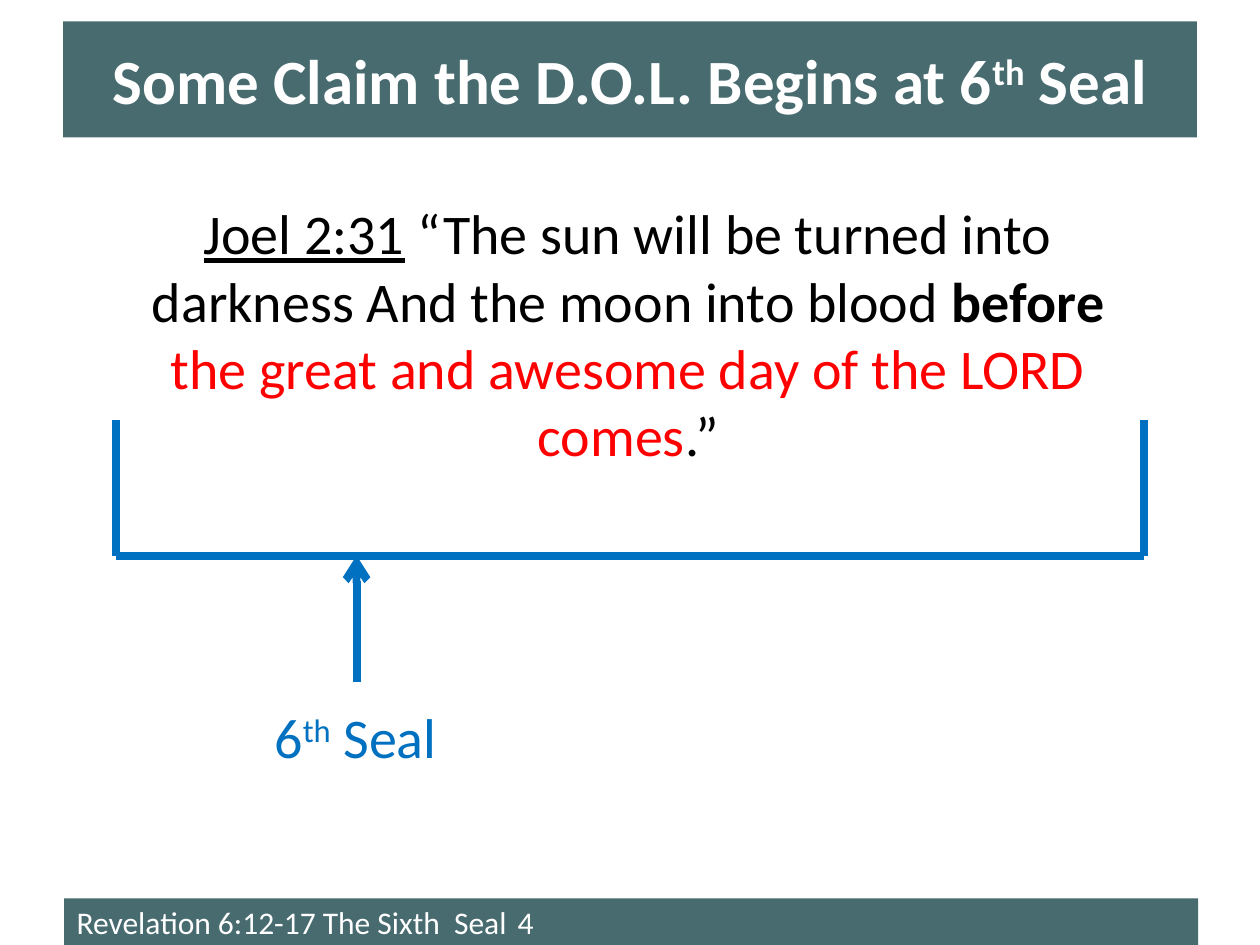
from dataclasses import dataclass
from typing import Sequence

from lxml.etree import SubElement
from pptx import Presentation
from pptx.dml.color import RGBColor as Rgb
from pptx.enum.shapes import MSO_CONNECTOR as Conn, MSO_SHAPE as Form
from pptx.enum.text import MSO_ANCHOR as Anchor, MSO_AUTO_SIZE as Fit, PP_ALIGN as Align
from pptx.oxml.ns import qn
from pptx.util import Inches, Pt

HUES = {"teal": "486B70", "blue": "0070C0", "red": "FF0000", "black": "000000", "white": "FFFFFF"}
LEFT, RIGHT, BASE, TOP = 0.92, 9.08, 4.41, 3.33
MARK = 2.83


@dataclass
class Box:
    left: float
    top: float
    width: float
    height: float

    def lengths(self) -> list:
        return [Inches(n) for n in (self.left, self.top, self.width, self.height)]


@dataclass
class Span:
    text: str
    hue: str
    bold: bool = False
    under: bool = False
    raised: bool = False


@dataclass
class Line:
    start: tuple[float, float]
    end: tuple[float, float]
    arrow: bool = False


def hue(name: str) -> Rgb:
    return Rgb.from_string(HUES[name])


def write(frame, spans: Sequence[Span], size: float, align: Align = Align.LEFT) -> None:
    frame.word_wrap = True
    frame.text = spans[0].text
    para = frame.paragraphs[0]
    para.alignment = align
    for span in spans[1:]:
        para.add_run().text = span.text
    for run, span in zip(para.runs, spans):
        font = run.font
        font.name, font.size = "Calibri", Pt(size)
        font.bold, font.underline = span.bold, span.under
        font.color.rgb = hue(span.hue)
        if span.raised:
            run._r.get_or_add_rPr().set("baseline", "30000")


def paint(shape) -> None:
    shape.fill.solid()
    shape.fill.fore_color.rgb = hue("teal")
    shape.line.fill.background()
    shape.text_frame.vertical_anchor = Anchor.MIDDLE


def add_bar(slide, box: Box, spans: Sequence[Span], size: float) -> None:
    bar = slide.shapes.add_shape(Form.RECTANGLE, *box.lengths())
    bar.shadow.inherit = False
    paint(bar)
    write(bar.text_frame, spans, size)


def set_title(slide, box: Box, spans: Sequence[Span], size: float) -> None:
    title = slide.shapes.title
    title.left, title.top, title.width, title.height = box.lengths()
    paint(title)
    title.text_frame.auto_size = Fit.NONE
    write(title.text_frame, spans, size, Align.CENTER)


def add_text(slide, box: Box, spans: Sequence[Span], size: float, align: Align = Align.LEFT) -> None:
    frame = slide.shapes.add_textbox(*box.lengths()).text_frame
    write(frame, spans, size, align)
    frame.auto_size = Fit.SHAPE_TO_FIT_TEXT


def add_line(slide, line: Line) -> None:
    ends = [Inches(n) for n in line.start + line.end]
    link = slide.shapes.add_connector(Conn.STRAIGHT, *ends)
    link.line.color.rgb = hue("blue")
    link.line.width = Pt(4.5)
    if line.arrow:
        SubElement(link.line._get_or_add_ln(), qn("a:tailEnd"), type="arrow")
    SubElement(link._element.spPr, qn("a:effectLst"))


def seal(lead: str, tone: str, bold: bool = False) -> list[Span]:
    return [
        Span(lead, tone, bold),
        Span("th", tone, bold, raised=True),
        Span(" Seal", tone, bold),
    ]


VERSE = [
    Span("Joel 2:31", "black", under=True),
    Span(" “The sun will be turned into darkness And the moon into blood ", "black"),
    Span("before ", "black", bold=True),
    Span("the great and awesome day of the LORD comes", "red"),
    Span(".”", "black"),
]
LINES = [
    Line((LEFT, BASE), (RIGHT, BASE)),
    *(Line((x, BASE), (x, TOP)) for x in (LEFT, RIGHT)),
    Line((MARK, BASE + 1), (MARK, BASE), arrow=True),
]


def main() -> None:
    deck = Presentation()
    deck.slide_width, deck.slide_height = Inches(10), Inches(7.5)
    slide = deck.slides.add_slide(deck.slide_layouts.get_by_name("Title Only"))
    foot = [Span("Revelation 6:12-17 The Sixth  Seal\t4", "white")]
    add_bar(slide, Box(0.51, 7.13, 9, 0.37), foot, 18)
    set_title(slide, Box(0.5, 0.17, 9, 0.92), seal("Some Claim the D.O.L. Begins at 6", "white", True), 36)
    for line in LINES:
        add_line(slide, line)
    add_text(slide, Box(2.08, 5.53, 2.25, 0.64), seal("6", "blue"), 32)
    add_text(slide, Box(0.88, 1.53, 8.21, 2.26), VERSE, 32, Align.CENTER)
    deck.save("out.pptx")


if __name__ == "__main__":
    main()
